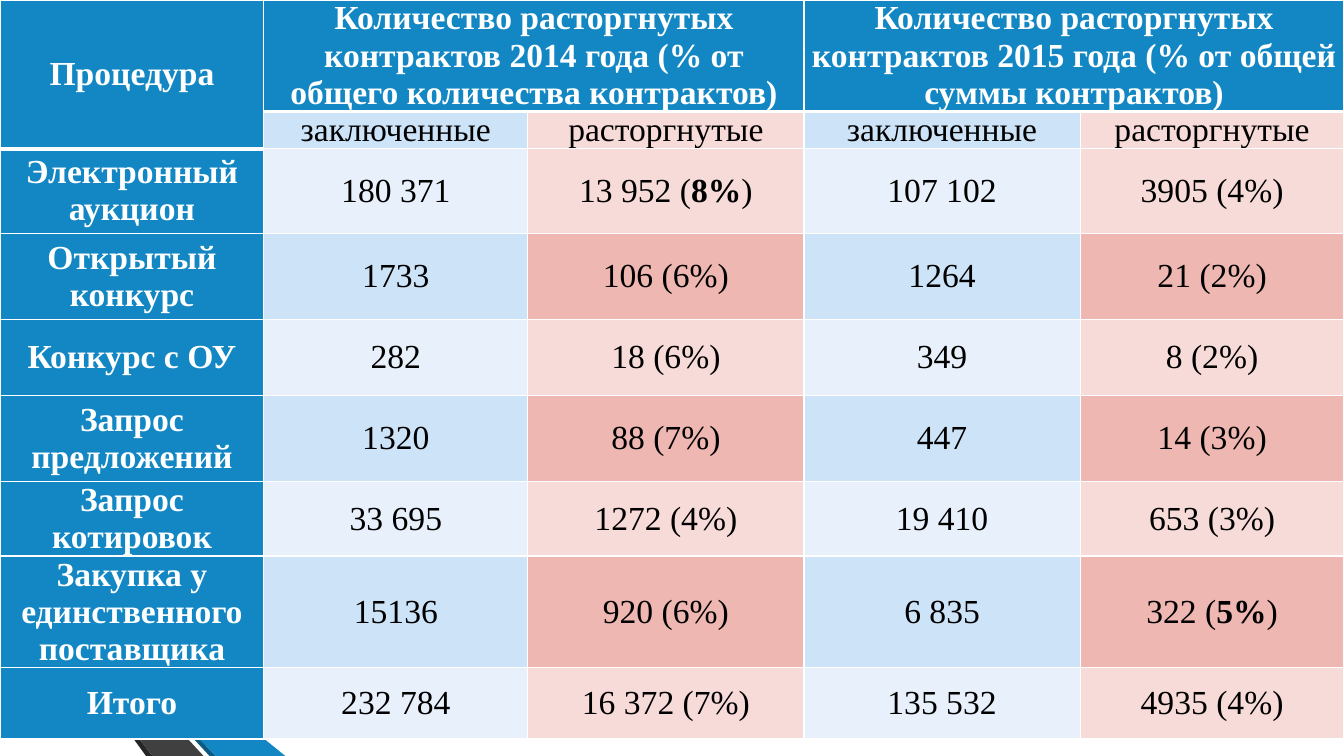
import lxml.etree
import pptx
import pptx.dml.color
import pptx.enum.text
import pptx.oxml.ns
import pptx.util

Cm = pptx.util.Cm
Pt = pptx.util.Pt

HUES = {
    "white": "FFFFFF", "black": "000000", "blue": "1287C3", "navy": "0C5A82",
    "grey": "404040", "dark": "262626", "ice": "E8F1FB", "sky": "CDE3F8",
    "blush": "F7DBD8", "rose": "EFB7B1",
}
WIDTHS = [6.65, 6.65, 6.96, 6.96, 6.65]
HEIGHTS = [1.98, 0.94, 2.13, 2.18, 1.9, 2.18, 1.83, 2.77, 1.8]
ROWS = [
    ["Процедура",
     "Количество расторгнутых контрактов 2014 года (% от общего количества контрактов)", "",
     "Количество расторгнутых контрактов 2015 года (% от общей суммы контрактов)", ""],
    ["", "заключенные", "расторгнутые", "заключенные", "расторгнутые"],
    ["Электронный аукцион", "180 371", "13 952 (*8%*)", "107 102", "3905 (4%)"],
    ["Открытый конкурс", "1733", "106 (6%)", "1264", "21 (2%)"],
    ["Конкурс с ОУ", "282", "18 (6%)", "349", "8 (2%)"],
    ["Запрос предложений", "1320", "88 (7%)", "447", "14 (3%)"],
    ["Запрос котировок", "33 695", "1272 (4%)", "19 410", "653 (3%)"],
    ["Закупка у единственного поставщика", "15136", "920 (6%)", "6 835", "322 (*5%*)"],
    ["Итого", "232 784", "16 372 (7%)", "135 532", "4935 (4%)"],
]
BANDS = [
    ("dark", [(0, 0), (3.27, 4.5), (3.43, 4.5)]),
    ("navy", [(0.86, 0.16), (4.87, 4.5), (5.03, 4.5)]),
    ("blue", [(0.86, 0.13), (0.86, 0.16), (5.03, 4.5), (6.78, 4.5), (1.55, 0.26)]),
    ("grey", [(0, 0), (3.43, 4.5), (4.72, 4.5), (0.81, 0.26), (0.68, 0.13)]),
]


def shade(name):
    """Return the named colour."""
    return pptx.dml.color.RGBColor.from_string(HUES[name])


def draw_bands(slide, left, top):
    """Draw the slanted bands from the given corner."""
    for hue, points in BANDS:
        spots = [(Cm(x), Cm(y)) for x, y in points]
        pen = slide.shapes.build_freeform(*spots[0])
        pen.add_line_segments(spots[1:], close=True)
        band = pen.convert_to_shape(Cm(left), Cm(top))
        band.shadow.inherit = False
        band.fill.solid()
        band.fill.fore_color.rgb = shade(hue)
        band.line.fill.background()


def pick_fill(row, col):
    """Choose the fill name of a cell."""
    if row == 0 or col == 0:
        return "blue"
    if row == 1:
        return "sky" if col % 2 else "blush"
    pair = ("ice", "blush") if row % 2 == 0 else ("sky", "rose")
    return pair[(col - 1) % 2]


def set_edges(cell, row, col):
    """Give a cell white edges, thick under the headings."""
    last = 1 if col == 0 else 0
    sizes = {"L": 1, "R": 1, "T": 3 if row == last + 1 else 1, "B": 3 if row <= last else 1}
    qn = pptx.oxml.ns.qn
    props = cell._tc.get_or_add_tcPr()
    for place, (side, size) in enumerate(sizes.items()):
        edge = lxml.etree.Element(qn("a:ln" + side), w=str(Pt(size)))
        fill = lxml.etree.SubElement(edge, qn("a:solidFill"))
        lxml.etree.SubElement(fill, qn("a:srgbClr"), val=HUES["white"])
        props.insert(place, edge)


def fill_cell(cell, row, col):
    """Set the text, fill and edges of a cell."""
    head = row == 0 or col == 0
    cell.fill.solid()
    cell.fill.fore_color.rgb = shade(pick_fill(row, col))
    cell.vertical_anchor = pptx.enum.text.MSO_ANCHOR.MIDDLE
    cell.margin_left = cell.margin_right = Cm(0.13)
    cell.margin_top = cell.margin_bottom = 0
    set_edges(cell, row, col)
    if not ROWS[row][col]:
        return
    para = cell.text_frame.paragraphs[0]
    para.alignment = pptx.enum.text.PP_ALIGN.CENTER
    for part, text in enumerate(ROWS[row][col].split("*")):
        run = para.add_run()
        run.text = text
        run.font.name = "Times New Roman"
        run.font.size = Pt(24)
        run.font.bold = head or part == 1
        run.font.color.rgb = shade("white" if head else "black")


def draw_table(slide, left, top):
    """Draw the table of contracts from the given corner."""
    frame = slide.shapes.add_table(len(ROWS), len(WIDTHS), Cm(left), Cm(top),
                                   Cm(sum(WIDTHS)), Cm(sum(HEIGHTS)))
    table = frame.table
    for col, width in enumerate(WIDTHS):
        table.columns[col].width = Cm(width)
    for row, height in enumerate(HEIGHTS):
        table.rows[row].height = Cm(height)
        for col in range(len(WIDTHS)):
            fill_cell(table.cell(row, col), row, col)
    for start, end in [((0, 0), (1, 0)), ((0, 1), (0, 2)), ((0, 3), (0, 4))]:
        table.cell(*start).merge(table.cell(*end))


def main():
    """Build and save the slide."""
    deck = pptx.Presentation()
    deck.slide_width, deck.slide_height = Cm(33.87), Cm(19.05)
    slide = deck.slides.add_slide(deck.slide_layouts[6])
    draw_bands(slide, 0.41, 14.55)
    draw_table(slide, 0, 0)
    deck.save("out.pptx")


if __name__ == "__main__":
    main()
